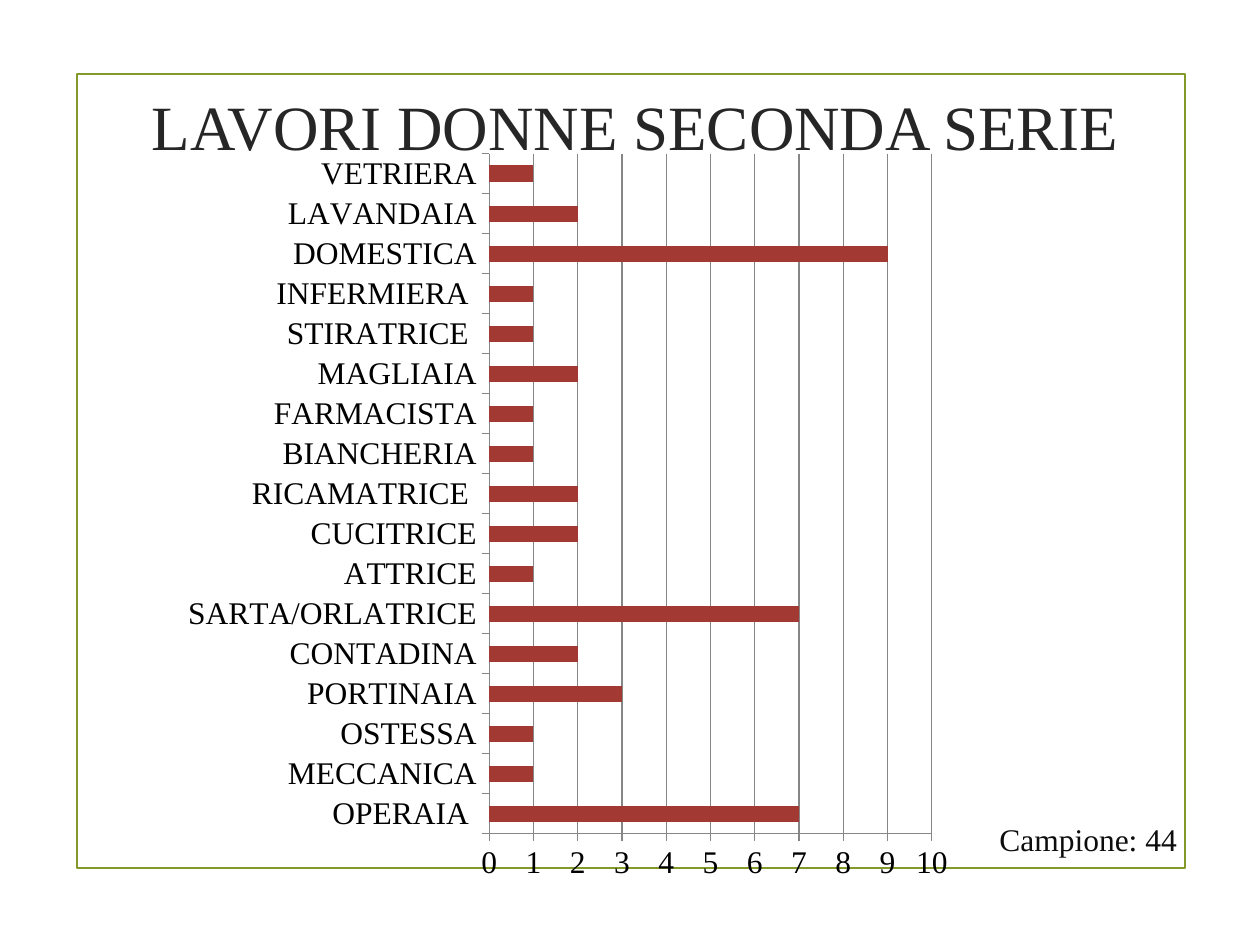
"""Build the slide on women's jobs in the second series."""
from lxml import etree
from pptx import Presentation
from pptx.chart.data import CategoryChartData
from pptx.dml.color import RGBColor
from pptx.enum import chart as ch, shapes, text
from pptx.oxml import ns
from pptx.util import Pt

FONT = "Times New Roman"
GREY = "868686"
JOBS = [
    ("OPERAIA ", 7), ("MECCANICA", 1), ("OSTESSA", 1), ("PORTINAIA", 3),
    ("CONTADINA", 2), ("SARTA/ORLATRICE", 7), ("ATTRICE", 1),
    ("CUCITRICE", 2), ("RICAMATRICE ", 2), ("BIANCHERIA", 1),
    ("FARMACISTA", 1), ("MAGLIAIA", 2), ("STIRATRICE ", 1),
    ("INFERMIERA ", 1), ("DOMESTICA", 9), ("LAVANDAIA", 2), ("VETRIERA", 1),
]


def color(code):
    return RGBColor.from_string(code)


def box(left, top, width, height):
    return Pt(left), Pt(top), Pt(width), Pt(height)


def add_frame(slide, place, line, weight):
    frame = slide.shapes.add_shape(shapes.MSO_SHAPE.RECTANGLE, *place)
    frame.shadow.inherit = False
    frame.fill.background()
    frame.line.color.rgb = color(line)
    frame.line.width = Pt(weight)


def add_text(slide, words, place, size, ink, align=text.PP_ALIGN.LEFT,
             anchor=text.MSO_ANCHOR.TOP):
    body = slide.shapes.add_textbox(*place).text_frame
    body.word_wrap = True
    body.vertical_anchor = anchor
    line = body.paragraphs[0]
    line.alignment = align
    run = line.add_run()
    run.text = words
    run.font.name = FONT
    run.font.size = Pt(size)
    run.font.color.rgb = color(ink)


def set_plot_area(chart, **fractions):
    plot_area = chart._chartSpace.chart.plotArea
    for old in plot_area.findall(ns.qn("c:layout")):
        plot_area.remove(old)
    layout = etree.Element(ns.qn("c:layout"))
    manual = etree.SubElement(layout, ns.qn("c:manualLayout"))
    settings = dict(layoutTarget="inner", xMode="edge", yMode="edge", **fractions)
    for name, value in settings.items():
        etree.SubElement(manual, ns.qn(f"c:{name}")).set("val", str(value))
    plot_area.insert(0, layout)


def style_axis(axis):
    axis.major_tick_mark = ch.XL_TICK_MARK.OUTSIDE
    axis.minor_tick_mark = ch.XL_TICK_MARK.NONE
    axis.format.line.color.rgb = color(GREY)
    axis.format.line.width = Pt(0.75)


def add_jobs_chart(slide, place, bar_color):
    data = CategoryChartData()
    data.categories = [job for job, _ in JOBS]
    data.add_series("Series 1", [count for _, count in JOBS])
    chart = slide.shapes.add_chart(
        ch.XL_CHART_TYPE.BAR_CLUSTERED, *place, data).chart
    chart.has_title = False
    chart.has_legend = False
    chart.font.name = FONT
    chart.font.size = Pt(18)
    chart.font.color.rgb = color("000000")

    plot = chart.plots[0]
    plot.vary_by_categories = False
    plot.gap_width = 150
    bars = plot.series[0].format.fill
    bars.solid()
    bars.fore_color.rgb = color(bar_color)

    style_axis(chart.category_axis)
    counts = chart.value_axis
    style_axis(counts)
    counts.minimum_scale = 0
    counts.maximum_scale = 10
    counts.major_unit = 1
    counts.has_major_gridlines = True
    counts.major_gridlines.format.line.color.rgb = color(GREY)
    counts.major_gridlines.format.line.width = Pt(0.75)
    set_plot_area(chart, x=0.412, y=0.025, w=0.544, h=0.903)


def main():
    deck = Presentation()
    deck.slide_width, deck.slide_height = Pt(720), Pt(540)
    slide = deck.slides.add_slide(deck.slide_layouts[6])
    add_frame(slide, box(44, 42.5, 633, 453.5), "83992A", 1.25)
    add_text(slide, "LAVORI DONNE SECONDA SERIE", box(54, 26, 618, 91), 36,
             "262626", text.PP_ALIGN.CENTER, text.MSO_ANCHOR.MIDDLE)
    add_text(slide, "Campione: 44", box(564, 465, 147.5, 29), 18, "0D0D0D")
    add_jobs_chart(slide, box(88, 77, 465, 430.5), "A23A33")
    deck.save("out.pptx")


if __name__ == "__main__":
    main()
